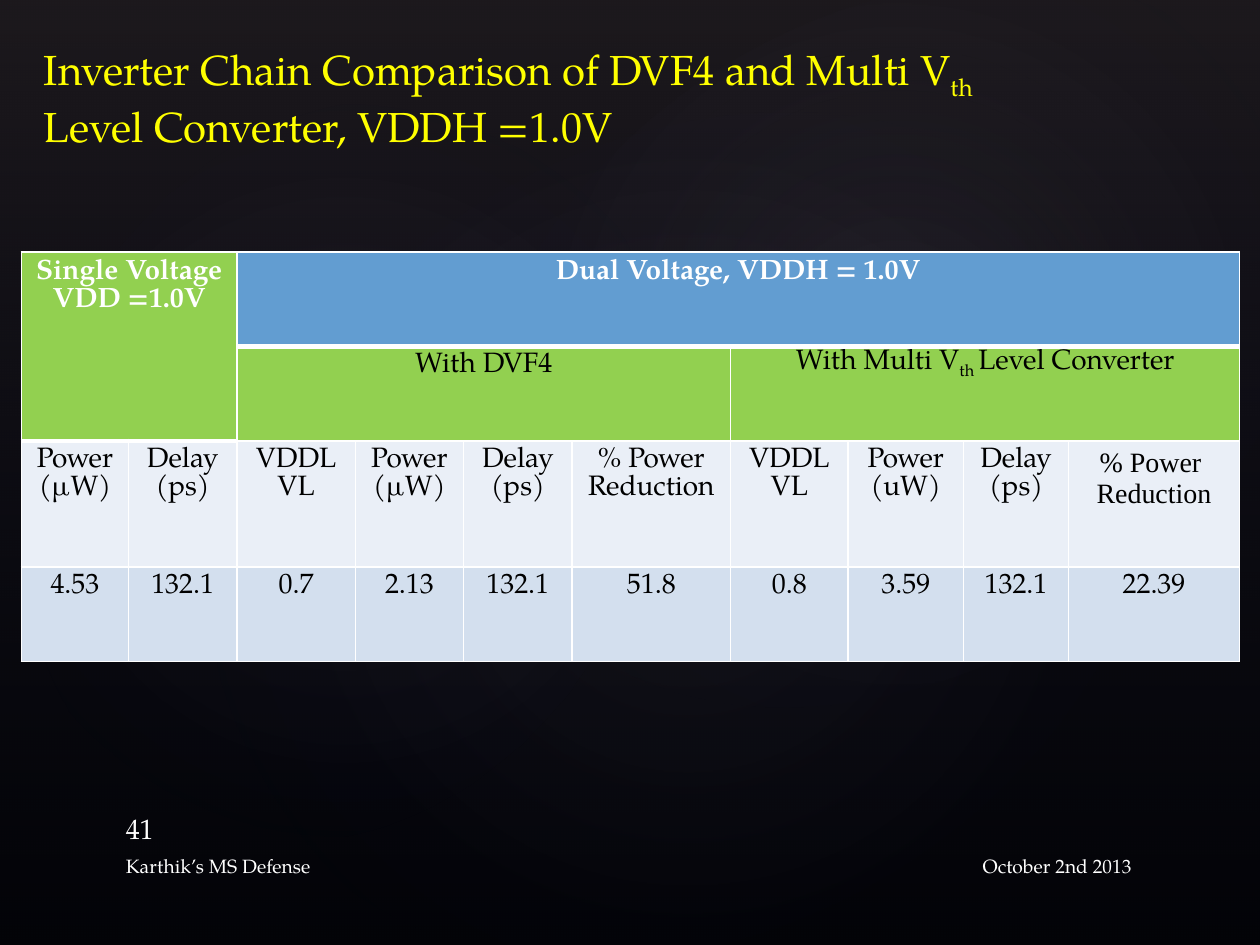
from pptx import Presentation
from pptx.dml.color import RGBColor
from pptx.enum.shapes import MSO_SHAPE
from pptx.enum.text import MSO_ANCHOR, PP_ALIGN
from pptx.oxml import parse_xml
from pptx.oxml.ns import nsdecls
from pptx.util import Inches, Pt

LEFT, CENTER, RIGHT = PP_ALIGN.LEFT, PP_ALIGN.CENTER, PP_ALIGN.RIGHT
TOP, BOTTOM = MSO_ANCHOR.TOP, MSO_ANCHOR.BOTTOM
RECTANGLE, OVAL = MSO_SHAPE.RECTANGLE, MSO_SHAPE.OVAL

SERIF, TIMES = "TeX Gyre Pagella", "Times New Roman"
COLORS = {
    "background": "000000", "haze": "504652", "navy": "242852", "glow": "C4BCC6",
    "title": "FFFF00", "white": "FFFFFF", "black": "000000",
    "green": "92D050", "blue": "629DD1", "label": "EAEFF7", "value": "D3DFEE",
}

# Content: a paragraph is a list of runs, and a run starting with "_" is a subscript
TITLE = [["Inverter Chain Comparison of DVF4 and Multi V", "_th ",
          "Level Converter, VDDH =1.0V"]]
FOOTERS = [  # text, box, size, alignment, anchor, bottom inset
    ("October 2nd 2013", (6.75, 6.73, 2.33, 0.4), 11, RIGHT, TOP, 0.05),
    ("41", (0.9, 6.39, 2.33, 0.33), 16, LEFT, BOTTOM, 0.01),
    ("Karthik’s MS Defense", (0.9, 6.73, 5, 0.4), 11, LEFT, TOP, 0.05),
]
GLOWS = [  # box, rotation, opacity in percent
    ((1.5, 1.14, 7.92, 6.24), 328.7, 7),
    ((-0.3, 1.28, 6.06, 4.9), 294.3, 8),
    ((3.58, 0.13, 7.09, 5.2), 328.7, 8),
]
HEADERS = [  # row, column, row span, column span, paragraphs, fill, text colour, bold
    (0, 0, 2, 2, [["Single Voltage"], ["VDD =1.0V"]], "green", "white", True),
    (0, 2, 1, 8, [["Dual Voltage, VDDH = 1.0V"]], "blue", "white", True),
    (1, 2, 1, 4, [["With DVF4"]], "green", "black", False),
    (1, 6, 1, 4, [["With Multi V", "_th ", "Level Converter"]], "green", "black", False),
]
COLUMNS = [  # width, label lines, value
    (0.85, ("Power", "(µW)"), "4.53"),
    (0.86, ("Delay", "(ps)"), "132.1"),
    (0.94, ("VDDL", "VL"), "0.7"),
    (0.86, ("Power", "(µW)"), "2.13"),
    (0.86, ("Delay", "(ps)"), "132.1"),
    (1.26, ("% Power", "Reduction"), "51.8"),
    (0.93, ("VDDL", "VL"), "0.8"),
    (0.92, ("Power", "(uW)"), "3.59"),
    (0.83, ("Delay", "(ps)"), "132.1"),
    (1.36, ("% Power ", "Reduction"), "22.39"),
]
ROW_HEIGHTS = [0.75, 0.75, 1, 0.75]
TABLE_BOX = (0.17, 2, 9.69, 3.25)


def inches(box):
    return [Inches(length) for length in box]


def write(frame, paragraphs, size=16, color="white", font=SERIF, bold=False,
          align=LEFT, spacing=None):
    for index, runs in enumerate(paragraphs):
        paragraph = frame.add_paragraph() if index else frame.paragraphs[0]
        paragraph.alignment = align
        paragraph.line_spacing = spacing
        for words in runs:
            run = paragraph.add_run()
            run.text = words.removeprefix("_")
            run.font.size, run.font.name, run.font.bold = Pt(size), font, bold
            run.font.color.rgb = RGBColor.from_string(COLORS[color])
            if words.startswith("_"):
                run.font._element.set("baseline", "-25000")


def add_text(slide, paragraphs, box, anchor=TOP, bottom=0.05, **text_format):
    frame = slide.shapes.add_textbox(*inches(box)).text_frame
    frame.word_wrap = True
    frame.vertical_anchor = anchor
    frame.margin_bottom = Inches(bottom)
    write(frame, paragraphs, **text_format)


def add_gradient(slide, kind, box, stops, direction, rotation=0):
    shape = slide.shapes.add_shape(kind, *inches(box))
    shape.rotation = rotation
    shape.shadow.inherit = False
    shape.line.fill.background()
    shape.fill.background()
    stop_xml = "".join(
        f'<a:gs pos="{position * 1000}"><a:srgbClr val="{COLORS[color]}">'
        f'<a:alpha val="{opacity * 1000}"/></a:srgbClr></a:gs>'
        for position, color, opacity in stops)
    gradient = parse_xml(f'<a:gradFill {nsdecls("a")} rotWithShape="1">'
                         f'<a:gsLst>{stop_xml}</a:gsLst>{direction}</a:gradFill>')
    properties = shape._element.spPr
    properties.replace(properties.find("{*}noFill"), gradient)


def style_cell(cell, fill, top=1, bottom=1):
    cell.fill.solid()
    cell.fill.fore_color.rgb = RGBColor.from_string(COLORS[fill])
    properties = cell._tc.get_or_add_tcPr()
    sides = (("L", 1), ("R", 1), ("T", top), ("B", bottom))
    for index, (side, width) in enumerate(sides):
        properties.insert(index, parse_xml(
            f'<a:ln{side} {nsdecls("a")} w="{Pt(width)}"><a:solidFill>'
            f'<a:srgbClr val="{COLORS["white"]}"/></a:solidFill></a:ln{side}>'))


def add_comparison_table(slide):
    table = slide.shapes.add_table(len(ROW_HEIGHTS), len(COLUMNS),
                                   *inches(TABLE_BOX)).table
    table.first_row = table.horz_banding = False
    for row, height in zip(table.rows, ROW_HEIGHTS):
        row.height = Inches(height)

    # Merged headers, with a heavy rule under the voltage headings
    for row, column, rows, columns, text, fill, color, bold in HEADERS:
        heading = table.cell(row, column)
        for r in range(row, row + rows):
            for c in range(column, column + columns):
                style_cell(table.cell(r, c), fill, top=3 if r else 1,
                           bottom=3 if row == 0 else 1)
        heading.merge(table.cell(row + rows - 1, column + columns - 1))
        write(heading.text_frame, text, color=color, bold=bold, align=CENTER,
              spacing=Pt(16))

    # Labels and measured values
    last = len(COLUMNS) - 1
    for index, (width, label, value) in enumerate(COLUMNS):
        table.columns[index].width = Inches(width)
        label_cell, value_cell = table.cell(2, index), table.cell(3, index)
        style_cell(label_cell, "label", top=3 if index < 2 else 1)
        style_cell(value_cell, "value")
        write(label_cell.text_frame, [[line] for line in label], color="black",
              align=CENTER, font=TIMES if index == last else SERIF,
              spacing=None if index == last else Pt(16))
        write(value_cell.text_frame, [[value]], color="black", align=CENTER,
              spacing=Pt(16))


def main():
    deck = Presentation()
    deck.slide_width, deck.slide_height = Inches(10), Inches(7.5)
    slide = deck.slides.add_slide(deck.slide_layouts[6])

    # Dark backdrop with soft glows
    slide.background.fill.solid()
    slide.background.fill.fore_color.rgb = RGBColor.from_string(COLORS["background"])
    add_gradient(slide, RECTANGLE, (0, 0, 10, 7.5),
                 [(0, "haze", 36), (100, "navy", 10)], '<a:lin ang="5400000"/>')
    for box, rotation, opacity in GLOWS:
        add_gradient(slide, OVAL, box, [(0, "glow", opacity), (58, "navy", 0)],
                     '<a:path path="circle"><a:fillToRect l="50000" t="50000" '
                     'r="50000" b="50000"/></a:path>', rotation)

    # Table, title and footers
    add_comparison_table(slide)
    add_text(slide, TITLE, (0.25, 0.25, 8.25, 1), anchor=BOTTOM, size=24, color="title")
    for text, box, size, align, anchor, bottom in FOOTERS:
        add_text(slide, [[text]], box, anchor=anchor, bottom=bottom, size=size,
                 align=align)
    deck.save("out.pptx")


if __name__ == "__main__":
    main()
